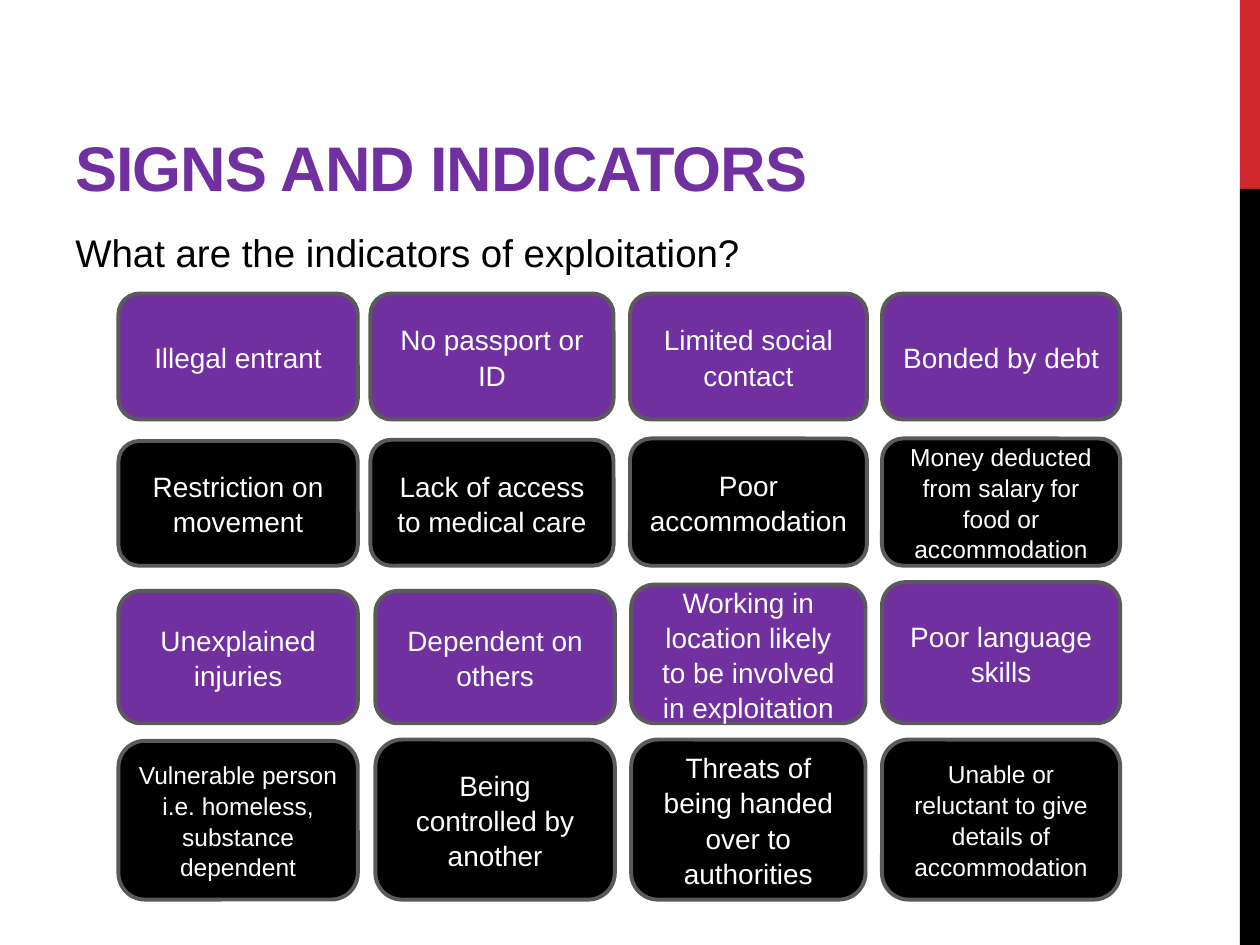
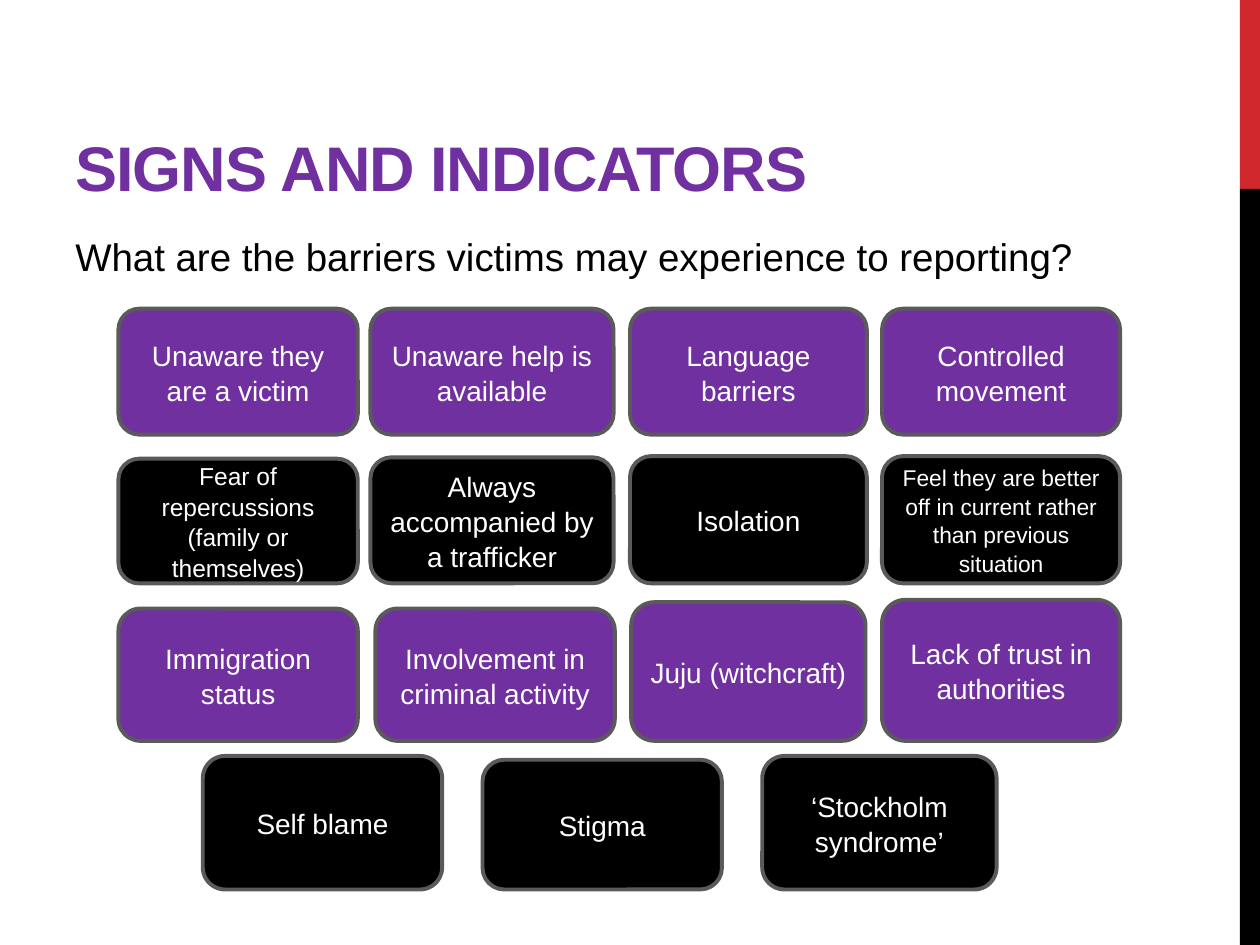
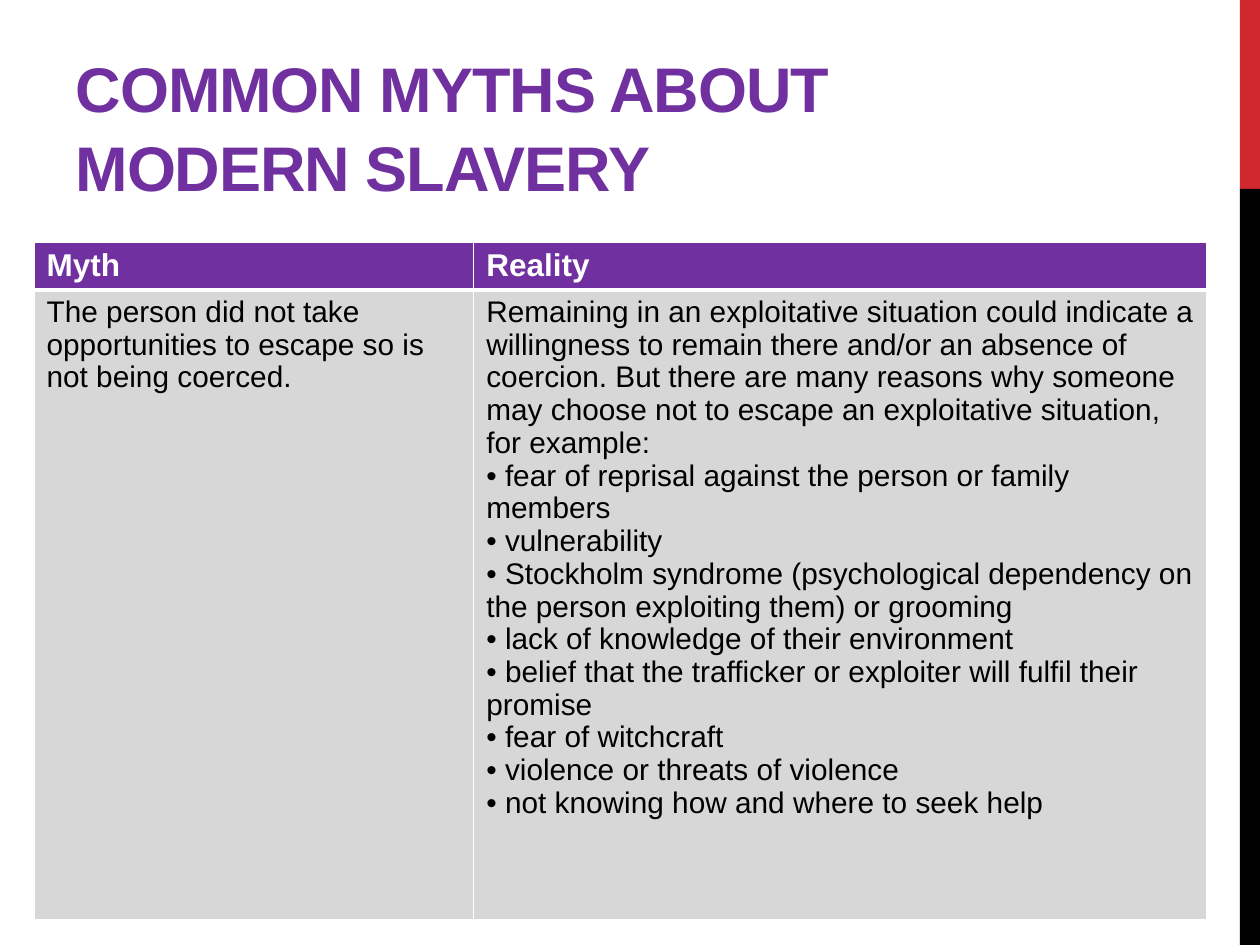
from lxml.etree import SubElement
from pptx import Presentation
from pptx.dml.color import RGBColor
from pptx.enum.shapes import MSO_SHAPE
from pptx.enum.text import MSO_ANCHOR, MSO_AUTO_SIZE, PP_ALIGN
from pptx.oxml import parse_xml
from pptx.oxml.ns import nsdecls, qn
from pptx.util import Pt

SCALE = 9144  # EMU in one px, 100 px to the inch
WIDTH, HEIGHT = 1000, 750
FONT = "Arial"
PURPLE = RGBColor(0x70, 0x30, 0xA0)
BLACK = RGBColor(0, 0, 0)
WHITE = RGBColor(255, 255, 255)
RED = RGBColor(0xD1, 0x28, 0x2E)
GREY = RGBColor(0x5A, 0x5A, 0x5A)
PALE = RGBColor(0xD7, 0xD7, 0xD7)

# (left, width) of each tile in a row
UPPER = [(94, 190), (294, 193), (500, 188), (700, 189)]
LOWER = [(94, 190), (298, 190), (501, 186), (700, 189)]
THREE = [(161, 190), (383, 190), (605, 186)]

# Row: top, height, columns, drop of each tile's top edge, labels
SIGNS = [
    (233, 100, UPPER, (0, 0, 0, 0),
     ["Illegal entrant", "No passport or ID", "Limited social contact",
      "Bonded by debt"]),
    (348, 101, UPPER, (2, 1, 0, 0),
     ["Restriction on movement", "Lack of access to medical care",
      "Poor accommodation",
      "Money deducted from salary for food or accommodation"]),
    (462, 112, LOWER, (7, 7, 2, 0),
     ["Unexplained injuries", "Dependent on others",
      "Working in location likely to be involved in exploitation",
      "Poor language skills"]),
    (587, 127, LOWER, (1, 0, 0, 0),
     ["Vulnerable person i.e. homeless, substance dependent",
      "Being controlled by another",
      "Threats of being handed over to authorities",
      "Unable or reluctant to give details of accommodation"]),
]
BARRIERS = [
    (245, 100, UPPER, (0, 0, 0, 0),
     ["Unaware they are a victim", "Unaware help is available",
      "Language barriers", "Controlled movement"]),
    (362, 101, UPPER, (2, 1, 0, 0),
     ["Fear of repercussions (family or themselves)",
      "Always accompanied by a trafficker", "Isolation",
      "Feel they are better off in current rather than previous situation"]),
    (476, 112, LOWER, (7, 7, 2, 0),
     ["Immigration status", "Involvement in criminal activity",
      "Juju (witchcraft)", "Lack of trust in authorities"]),
    (600, 106, THREE, (0, 3, 0),
     ["Self blame", "Stigma", "‘Stockholm syndrome’"]),
]
# Labels too long for the usual 16 points
SMALL = {
    SIGNS[1][4][3]: 14, SIGNS[3][4][0]: 14, SIGNS[3][4][3]: 14,
    BARRIERS[1][4][0]: 14, BARRIERS[1][4][3]: 13,
}

MYTH = "The person did not take opportunities to escape so is not being coerced."
REASONS = [
    "fear of reprisal against the person or family members",
    "vulnerability",
    "Stockholm syndrome (psychological dependency on the person exploiting "
    "them) or grooming",
    "lack of knowledge of their environment",
    "belief that the trafficker or exploiter will fulfil their promise",
    "fear of witchcraft",
    "violence or threats of violence",
    "not knowing how and where to seek help",
]
REALITY = [
    "Remaining in an exploitative situation could indicate a willingness to "
    "remain there and/or an absence of coercion. But there are many reasons "
    "why someone may choose not to escape an exploitative situation, for "
    "example:",
] + [f"• {reason}" for reason in REASONS]


def emu(*sizes):
    return [size * SCALE for size in sizes]


def write(frame, text, size, color, bold=False, align=PP_ALIGN.LEFT, gap=1.0):
    frame.text = text
    frame.word_wrap = True
    for para in frame.paragraphs:
        para.alignment = align
        para.line_spacing = gap
        for run in para.runs:
            font = run.font
            font.name, font.size, font.bold = FONT, Pt(size), bold
            font.color.rgb = color


def block(slide, kind, box, fill):
    shape = slide.shapes.add_shape(kind, *emu(*box))
    shape.shadow.inherit = False
    shape.fill.solid()
    shape.fill.fore_color.rgb = fill
    shape.line.fill.background()
    return shape


def start(deck, text, width):
    """Add a slide with the side bars and its title."""
    slide = deck.slides.add_slide(deck.slide_layouts[5])
    left, split = 984, 150
    block(slide, MSO_SHAPE.RECTANGLE, (left, 0, WIDTH - left, split), RED)
    block(slide, MSO_SHAPE.RECTANGLE,
          (left, split, WIDTH - left, HEIGHT - split), BLACK)
    title = slide.shapes.title
    title.left, title.top, title.width, title.height = emu(50, 17, width, 150)
    frame = title.text_frame
    write(frame, text, 36, PURPLE, bold=True, gap=1.05)
    frame.auto_size = MSO_AUTO_SIZE.NONE
    frame.vertical_anchor = MSO_ANCHOR.BOTTOM
    for run in frame.paragraphs[0].runs:
        run.font._element.set("spc", "-60")
    return slide


def tile(slide, box, text, fill):
    shape = block(slide, MSO_SHAPE.ROUNDED_RECTANGLE, box, fill)
    shape.line.color.rgb = GREY
    shape.line.width = Pt(2.25)
    shape.text_frame.vertical_anchor = MSO_ANCHOR.MIDDLE
    write(shape.text_frame, text, SMALL.get(text, 16), WHITE,
          align=PP_ALIGN.CENTER, gap=1.05)


def tiles(deck, ask, top, rows):
    """Add a slide with a question above rows of tiles."""
    slide = start(deck, "SIGNS AND INDICATORS", 633)
    box = slide.shapes.add_textbox(*emu(50, top, 907, 47))
    write(box.text_frame, ask, 22, BLACK)
    for index, (y, height, cols, drops, labels) in enumerate(rows):
        fill = BLACK if index % 2 else PURPLE
        for (x, width), drop, label in zip(cols, drops, labels):
            tile(slide, (x, y + drop, width, height - drop), label, fill)


def border(cell, widths):
    """Draw white edges; widths are points for left, right, top, bottom."""
    props = cell._tc.get_or_add_tcPr()
    for index, (side, width) in enumerate(zip("LRTB", widths)):
        line = parse_xml(f'<a:ln{side} {nsdecls("a")} w="{Pt(width)}"/>')
        fill = SubElement(line, qn("a:solidFill"))
        SubElement(fill, qn("a:srgbClr"), val=str(WHITE))
        props.insert(index, line)


def myths(deck):
    slide = start(deck, "COMMON MYTHS ABOUT MODERN SLAVERY", 833)
    cols, rows = (349, 582), (38, 500)
    table = slide.shapes.add_table(
        2, 2, *emu(27, 192, sum(cols), sum(rows))).table
    for part, size in zip(table.columns, emu(*cols)):
        part.width = size
    for part, size in zip(table.rows, emu(*rows)):
        part.height = size
    texts = [("Myth", "Reality"), (MYTH, "\n".join(REALITY))]
    looks = [(18, WHITE, True, PURPLE, 1.0, (1, 1, 1, 3)),
             (17, BLACK, False, PALE, 0.98, (1, 1, 3, 1))]
    for row, line, look in zip(table.rows, texts, looks):
        size, color, bold, fill, gap, edges = look
        for cell, text in zip(row.cells, line):
            write(cell.text_frame, text, size, color, bold, gap=gap)
            cell.fill.solid()
            cell.fill.fore_color.rgb = fill
            border(cell, edges)


def main():
    deck = Presentation()
    deck.slide_width, deck.slide_height = emu(WIDTH, HEIGHT)
    tiles(deck, "What are the indicators of exploitation?", 177, SIGNS)
    tiles(deck, "What are the barriers victims may experience to reporting?",
          180, BARRIERS)
    myths(deck)
    deck.save("out.pptx")


if __name__ == "__main__":
    main()
